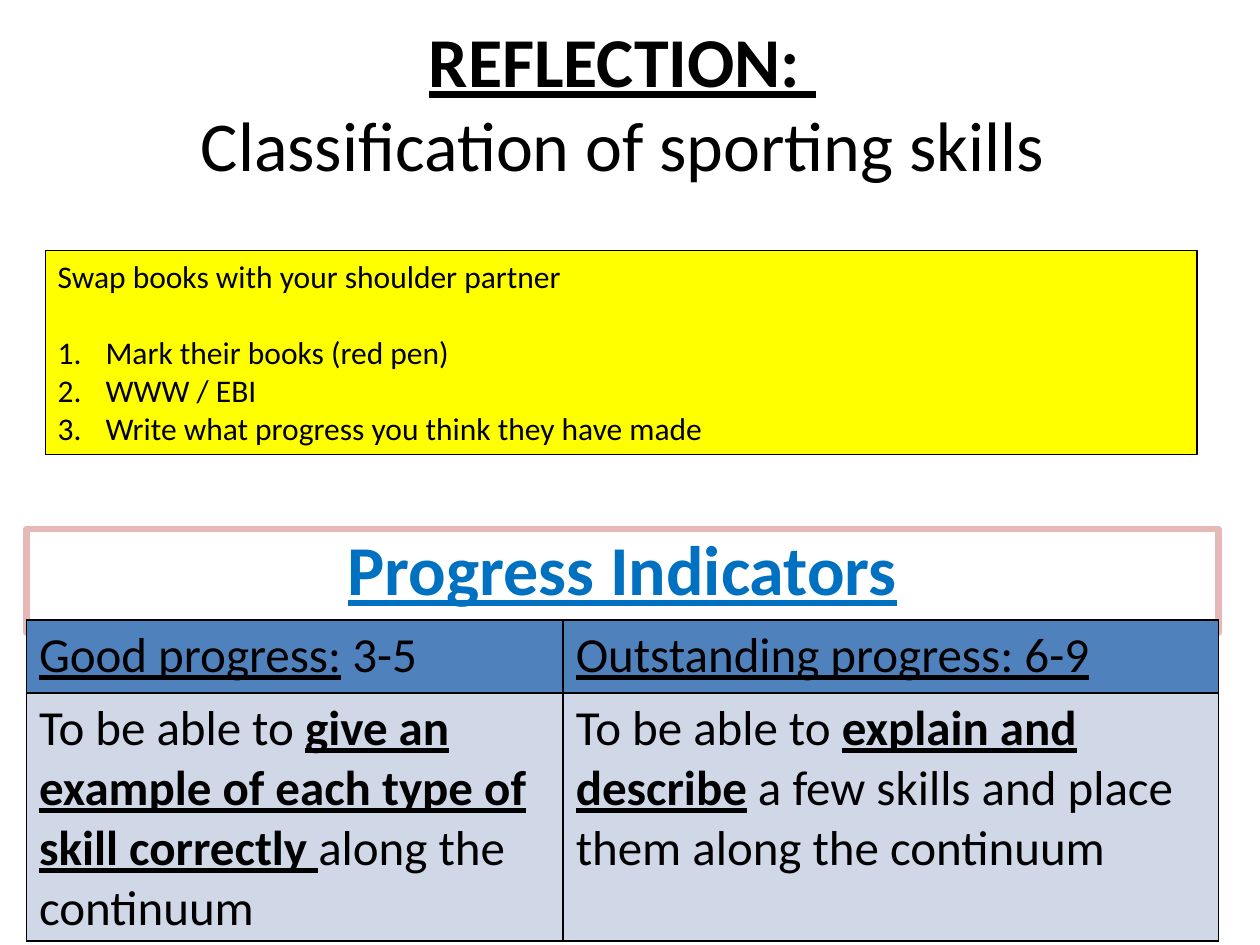
"""Build the reflection slide with partner tasks and progress indicators."""
from dataclasses import dataclass

from lxml import etree
from pptx import Presentation
from pptx.dml.color import RGBColor
from pptx.enum.shapes import MSO_SHAPE
from pptx.enum.text import MSO_ANCHOR, PP_ALIGN
from pptx.oxml.ns import qn
from pptx.util import Inches, Pt

RECTANGLE = MSO_SHAPE.RECTANGLE
TOP, MIDDLE = MSO_ANCHOR.TOP, MSO_ANCHOR.MIDDLE
LEFT, CENTER = PP_ALIGN.LEFT, PP_ALIGN.CENTER


@dataclass(frozen=True)
class Theme:
    font: str = "Calibri"
    ink: str = "000000"
    accent: str = "0070C0"
    frame: str = "E6B9B8"
    note: str = "FFFF00"
    header: str = "4F81BD"
    body: str = "D0D8E8"
    heading_size: int = 40
    table_size: int = 28
    task_size: int = 18


THEME = Theme()
SLIDE_SIZE = (10, 7.5)
PLAIN, UNDERLINED, STRONG = (False, False), (False, True), (True, True)

TITLE = [("REFLECTION: \v", STRONG), ("Classification of sporting skills", PLAIN)]
INTRO = "Swap books with your shoulder partner"
TASKS = [
    "Mark their books (red pen)",
    "WWW / EBI",
    "Write what progress you think they have made",
]
INDICATORS = [("Progress Indicators", STRONG)]
PROGRESS = [
    [
        [("Good progress:", UNDERLINED), (" 3-5", PLAIN)],
        [("Outstanding progress: 6-9", UNDERLINED)],
    ],
    [
        [
            ("To be able to ", PLAIN),
            ("give an example of each type of skill correctly ", STRONG),
            ("along the continuum", PLAIN),
        ],
        [
            ("To be able to ", PLAIN),
            ("explain and describe", STRONG),
            (" a few skills and place them along the continuum", PLAIN),
        ],
    ],
]

TITLE_BOX = (0.39, 0, 9.1, 1.61)
TASK_BOX = (0.36, 1.99, 9.14, 1.62)
INDICATOR_BOX = (0.21, 4.2, 9.46, 0.82)
TABLE_LEFT, TABLE_TOP = 0.21, 4.92
COLUMNS, ROWS = (4.26, 5.2), (0.58, 1.95)
TASK_INDENT = 0.38
BORDER_WIDTH = 1


def color(value):
    return RGBColor.from_string(value)


def place(box):
    return [Inches(length) for length in box]


def write(paragraph, parts, size, ink=THEME.ink, align=LEFT):
    paragraph.alignment = align
    for words, (bold, underline) in parts:
        run = paragraph.add_run()
        run.text = words.rstrip("\v")
        font = run.font
        font.name, font.size = THEME.font, Pt(size)
        font.bold, font.underline = bold, underline
        font.color.rgb = color(ink)
        if words.endswith("\v"):
            paragraph.add_line_break()


def add_panel(slide, box, line, width, fill=None):
    panel = slide.shapes.add_shape(RECTANGLE, *place(box))
    panel.shadow.inherit = False
    if fill:
        panel.fill.solid()
        panel.fill.fore_color.rgb = color(fill)
    else:
        panel.fill.background()
    panel.line.color.rgb = color(line)
    panel.line.width = Pt(width)
    panel.text_frame.word_wrap = True
    panel.text_frame.vertical_anchor = TOP
    return panel.text_frame


def number(paragraph):
    properties = paragraph._p.get_or_add_pPr()
    properties.set("marL", str(Inches(TASK_INDENT)))
    properties.set("indent", str(-Inches(TASK_INDENT)))
    bullet = etree.SubElement(properties, qn("a:buAutoNum"))
    bullet.set("type", "arabicPeriod")


def outline(cell):
    properties = cell._tc.get_or_add_tcPr()
    for position, side in enumerate(("lnL", "lnR", "lnT", "lnB")):
        border = etree.Element(qn(f"a:{side}"), w=str(Pt(BORDER_WIDTH)))
        fill = etree.SubElement(border, qn("a:solidFill"))
        etree.SubElement(fill, qn("a:srgbClr"), val=THEME.ink)
        properties.insert(position, border)


def add_title(slide):
    title = slide.shapes.add_textbox(*place(TITLE_BOX)).text_frame
    title.word_wrap = True
    title.vertical_anchor = MIDDLE
    write(title.paragraphs[0], TITLE, THEME.heading_size, align=CENTER)


def add_indicators(slide):
    heading = add_panel(slide, INDICATOR_BOX, THEME.frame, 3.75).paragraphs[0]
    write(heading, INDICATORS, THEME.heading_size, THEME.accent, CENTER)
    heading.line_spacing = 0.9


def add_progress(slide):
    box = (TABLE_LEFT, TABLE_TOP, sum(COLUMNS), sum(ROWS))
    table = slide.shapes.add_table(len(ROWS), len(COLUMNS), *place(box)).table
    for column, width in zip(table.columns, COLUMNS):
        column.width = Inches(width)
    for row, height, entries, fill in zip(
        table.rows, ROWS, PROGRESS, (THEME.header, THEME.body)
    ):
        row.height = Inches(height)
        for cell, parts in zip(row.cells, entries):
            cell.fill.solid()
            cell.fill.fore_color.rgb = color(fill)
            outline(cell)
            write(cell.text_frame.paragraphs[0], parts, THEME.table_size)


def add_tasks(slide):
    notes = add_panel(slide, TASK_BOX, THEME.ink, 0.75, THEME.note)
    write(notes.paragraphs[0], [(INTRO, PLAIN)], THEME.task_size)
    for index, task in enumerate(TASKS):
        paragraph = notes.add_paragraph()
        write(paragraph, [(task, PLAIN)], THEME.task_size)
        if index == 0:
            paragraph.space_before = Pt(THEME.task_size * 1.22)
        number(paragraph)


def main():
    presentation = Presentation()
    presentation.slide_width, presentation.slide_height = place(SLIDE_SIZE)
    slide = presentation.slides.add_slide(presentation.slide_layouts[6])
    for add_part in (add_title, add_indicators, add_progress, add_tasks):
        add_part(slide)
    presentation.save("out.pptx")


if __name__ == "__main__":
    main()
